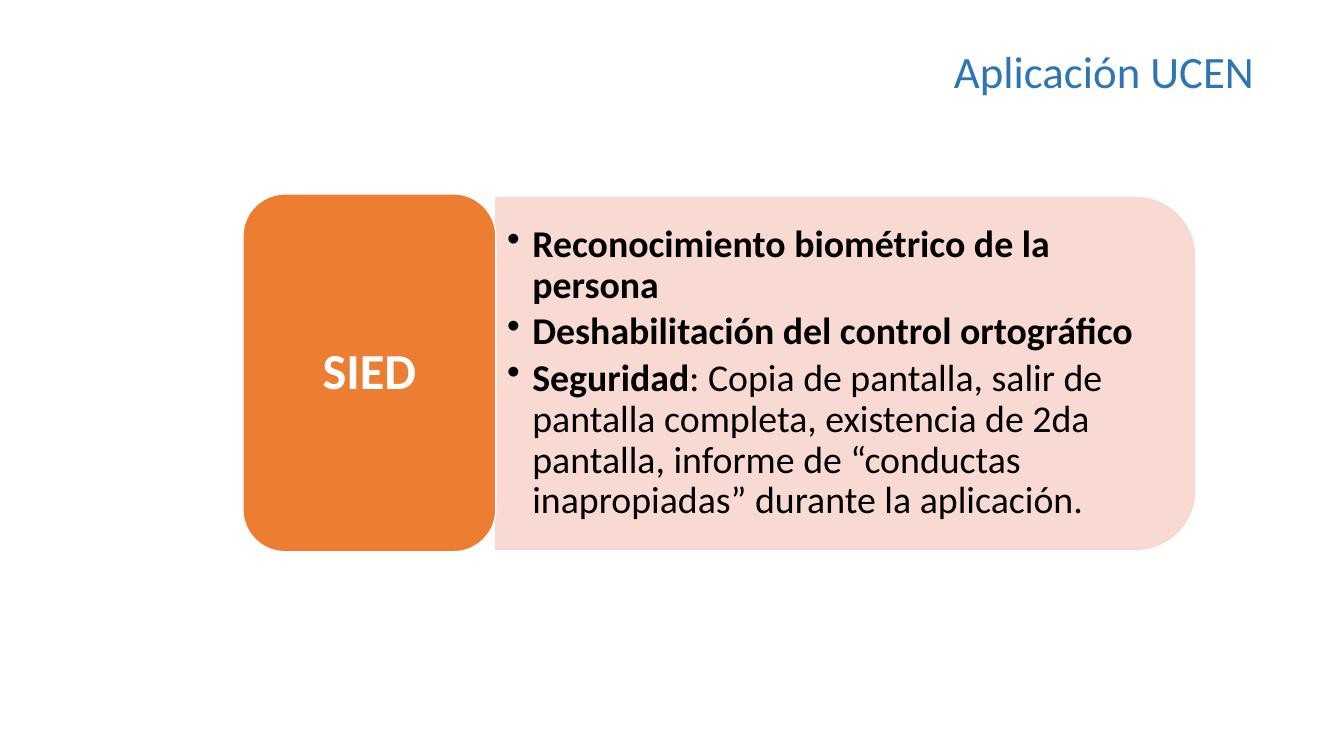
from dataclasses import dataclass

from lxml import etree
from pptx import Presentation
from pptx.dml.color import RGBColor
from pptx.enum import shapes, text
from pptx.oxml import ns
from pptx.util import Pt


@dataclass(frozen=True)
class Theme:
    """Colours, type sizes and font of the slide."""
    font: str = "Calibri"
    title: str = "2E75B6"
    panel: str = "F8D7CE"
    label: str = "ED7D31"
    light: str = "FFFFFF"
    dark: str = "000000"
    title_size: int = 32
    body_size: int = 27
    label_size: int = 36


THEME = Theme()
FEATURES = [
    [("Reconocimiento biométrico de la persona", True)],
    [("Deshabilitación del control ortográfico", True)],
    [("Seguridad", True),
     (": Copia de pantalla, salir de pantalla completa, existencia de 2da "
      "pantalla, informe de “conductas inapropiadas” durante la aplicación.", False)],
]


def set_frame(frame, anchor, side, edge):
    """Set wrapping, anchor and insets of a text frame."""
    values = dict(word_wrap=True, vertical_anchor=anchor,
                  margin_left=Pt(side), margin_right=Pt(side),
                  margin_top=Pt(edge), margin_bottom=Pt(edge))
    for name, value in values.items():
        setattr(frame, name, value)


def write(paragraph, runs, size, colour, align, after=0):
    """Fill a paragraph with (words, bold) runs."""
    for name, value in dict(alignment=align, line_spacing=0.9,
                            space_before=Pt(0), space_after=Pt(after)).items():
        setattr(paragraph, name, value)
    for words, bold in runs:
        run = paragraph.add_run()
        run.text = words
        for name, value in dict(name=THEME.font, size=Pt(size), bold=bold).items():
            setattr(run.font, name, value)
        run.font.color.rgb = RGBColor.from_string(colour)


def paint(shape, fill, line, alpha=None):
    """Give a shape a flat fill and a thin outline."""
    shape.shadow.inherit = False
    shape.fill.solid()
    shape.fill.fore_color.rgb = RGBColor.from_string(fill)
    shape.line.color.rgb = RGBColor.from_string(line)
    shape.line.width = Pt(1)
    if alpha:
        for colour in shape._element.spPr.iter(ns.qn("a:srgbClr")):
            etree.SubElement(colour, ns.qn("a:alpha"), val=str(alpha * 1000))


def add_bullet(paragraph, indent):
    """Give a paragraph a hanging round bullet."""
    properties = paragraph._p.get_or_add_pPr()
    properties.set("marL", str(Pt(indent)))
    properties.set("indent", str(Pt(-indent)))
    etree.SubElement(properties, ns.qn("a:buChar"), char="•")


def add_title(slide, left, top, width, height):
    """Place the right-aligned heading."""
    heading = slide.shapes.add_textbox(Pt(left), Pt(top), Pt(width), Pt(height))
    set_frame(heading.text_frame, text.MSO_ANCHOR.TOP, 7.2, 3.6)
    write(heading.text_frame.paragraphs[0], [("Aplicación UCEN", False)],
          THEME.title_size, THEME.title, text.PP_ALIGN.RIGHT)


def add_features(slide, left, top, width, height):
    """Place the panel rounded on its right side, with the bulleted features."""
    shift = (width - height) / 2
    panel = slide.shapes.add_shape(
        shapes.MSO_SHAPE.ROUND_2_SAME_RECTANGLE,
        Pt(left + shift), Pt(top - shift), Pt(height), Pt(width))
    panel.rotation = 90
    paint(panel, THEME.panel, THEME.panel, alpha=90)

    inset = 12.25
    features = slide.shapes.add_textbox(
        Pt(left), Pt(top + inset), Pt(width - inset), Pt(height - 2 * inset))
    frame = features.text_frame
    set_frame(frame, text.MSO_ANCHOR.MIDDLE, 8, 4)
    for index, runs in enumerate(FEATURES):
        paragraph = frame.add_paragraph() if index else frame.paragraphs[0]
        add_bullet(paragraph, 18)
        write(paragraph, runs, THEME.body_size, THEME.dark, text.PP_ALIGN.LEFT, 4)


def add_label(slide, left, top, width, height):
    """Place the rounded block that names the system."""
    label = slide.shapes.add_shape(
        shapes.MSO_SHAPE.ROUNDED_RECTANGLE, Pt(left), Pt(top), Pt(width), Pt(height))
    paint(label, THEME.label, THEME.light)
    set_frame(label.text_frame, text.MSO_ANCHOR.MIDDLE, 10.8, 5)
    write(label.text_frame.paragraphs[0], [("SIED", True)],
          THEME.label_size, THEME.light, text.PP_ALIGN.CENTER)


def main():
    """Build the slide and save it."""
    deck = Presentation()
    deck.slide_width, deck.slide_height = Pt(960), Pt(540)
    slide = deck.slides.add_slide(deck.slide_layouts[6])
    add_title(slide, 123, 31.7, 780, 46.8)
    add_features(slide, 354.25, 141.1, 499, 251.3)
    add_label(slide, 173.5, 138.5, 180.75, 255.6)
    deck.save("out.pptx")


if __name__ == "__main__":
    main()
